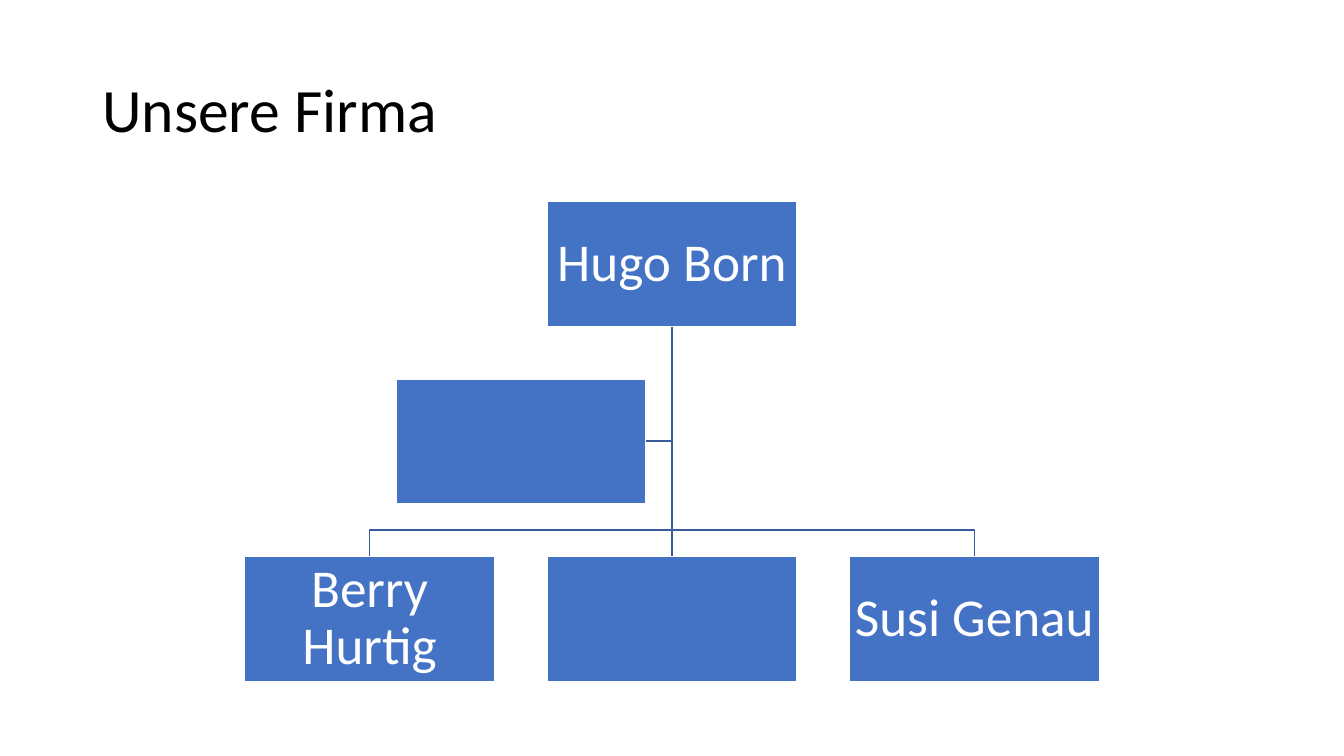
from lxml import etree
from pptx import Presentation
from pptx.dml.color import RGBColor
from pptx.enum import shapes, text
from pptx.oxml import ns
from pptx.util import Pt

PX = 9525
COLORS = {"box": "4472C4", "line": "365B9D", "white": "FFFFFF", "title": "000000"}
BOX_W, BOX_H = 238, 119
CENTER, PITCH = 640, 288
BOSS_Y, ASSISTANT_Y, STAFF_Y = 192, 361, 530
BOSS_BOTTOM, BUS_Y = BOSS_Y + BOX_H, 505


def rgb(name):
    return RGBColor.from_string(COLORS[name])


def format_text(shape, words, size, color, align):
    tf = shape.text_frame
    tf.text = words
    tf.word_wrap = True
    tf.auto_size = text.MSO_AUTO_SIZE.NONE
    tf.vertical_anchor = text.MSO_ANCHOR.MIDDLE
    p = tf.paragraphs[0]
    p.alignment = align
    p.line_spacing = 0.9
    p.font.name = "Calibri"
    p.font.size = Pt(size)
    p.font.color.rgb = rgb(color)


prs = Presentation()
prs.slide_width, prs.slide_height = 1280 * PX, 720 * PX
s = prs.slides.add_slide(prs.slide_layouts[5])

title = s.shapes.title
title.left, title.top, title.width, title.height = 88 * PX, 38 * PX, 1104 * PX, 139 * PX
format_text(title, "Unsere Firma", 44, "title", text.PP_ALIGN.LEFT)

assistant_x = CENTER - PITCH // 2
assistant_mid = ASSISTANT_Y + BOX_H // 2
branches = [[(CENTER, assistant_mid), (assistant_x + BOX_W // 2, assistant_mid)]]
for x in (CENTER + PITCH, CENTER - PITCH):
    branches.append([(CENTER, BUS_Y), (x, BUS_Y), (x, STAFF_Y)])

for points in branches:
    fb = s.shapes.build_freeform(CENTER, BOSS_BOTTOM, scale=PX)
    fb.add_line_segments(points, close=False)
    sp = fb.convert_to_shape()
    sp.shadow.inherit = False
    sp.fill.background()
    sp.line.color.rgb = rgb("line")
    sp.line.width = Pt(1)

nodes = [
    ("Hugo Born", CENTER, BOSS_Y),
    ("Berry Hurtig", CENTER - PITCH, STAFF_Y),
    ("", CENTER, STAFF_Y),
    ("Susi Genau", CENTER + PITCH, STAFF_Y),
    ("", assistant_x, ASSISTANT_Y),
]
boxes = []
for words, x, y in nodes:
    sp = s.shapes.add_shape(shapes.MSO_SHAPE.RECTANGLE, (x - BOX_W // 2) * PX, y * PX,
                            BOX_W * PX, BOX_H * PX)
    sp.shadow.inherit = False
    sp.fill.solid()
    sp.fill.fore_color.rgb = rgb("box")
    sp.line.color.rgb = rgb("white")
    sp.line.width = Pt(1)
    tf = sp.text_frame
    tf.margin_left = tf.margin_top = tf.margin_right = tf.margin_bottom = 3 * PX
    format_text(sp, words, 38, "white", text.PP_ALIGN.CENTER)
    boxes.append(sp)

trunk = s.shapes.add_connector(shapes.MSO_CONNECTOR.STRAIGHT, CENTER * PX, BOSS_BOTTOM * PX,
                               CENTER * PX, STAFF_Y * PX)
trunk.begin_connect(boxes[0], 2)
trunk.end_connect(boxes[2], 0)
trunk.line.color.rgb = rgb("line")
trunk.line.width = Pt(1)
etree.SubElement(trunk._element.spPr, ns.qn("a:effectLst"))

prs.save("out.pptx")
